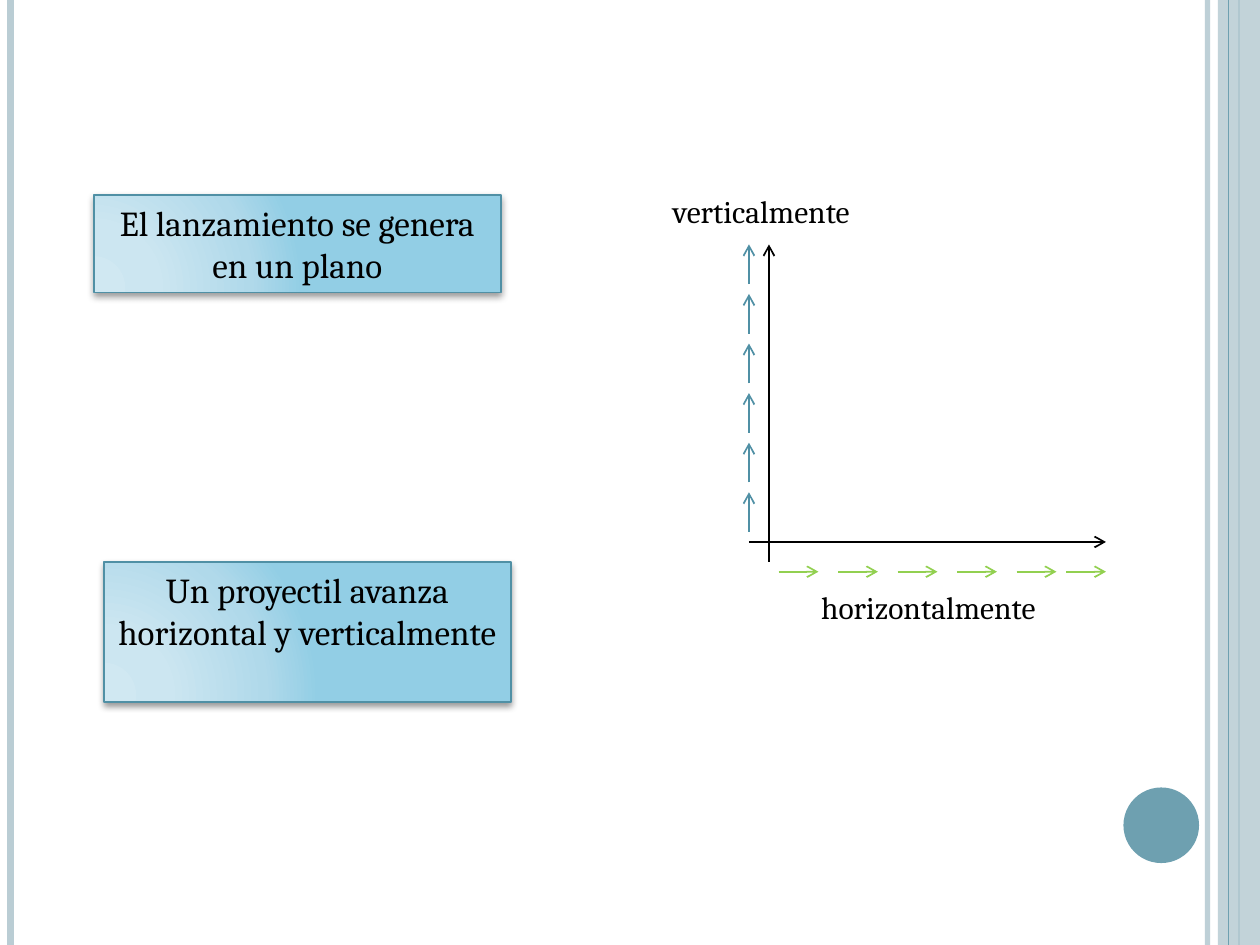
from lxml import etree
from pptx import Presentation
from pptx.dml.color import RGBColor
from pptx.enum.shapes import MSO_CONNECTOR, MSO_SHAPE
from pptx.enum.text import MSO_ANCHOR, PP_ALIGN as Align
from pptx.oxml import parse_xml
from pptx.oxml.ns import nsdecls, qn
from pptx.util import Pt

BLACK = RGBColor(0x00, 0x00, 0x00)
PALE = RGBColor(0xBA, 0xCD, 0xD4)
TEAL = RGBColor(0x6E, 0xA0, 0xB0)
BLUE = RGBColor(0x50, 0x90, 0xA5)
GREEN = RGBColor(0x92, 0xD0, 0x50)
BOX_STOPS = [
    (0, RGBColor(0xD0, 0xE8, 0xF2)),
    (30, RGBColor(0xCC, 0xE6, 0xF1)),
    (75, RGBColor(0xB0, 0xD9, 0xEA)),
    (100, RGBColor(0x92, 0xCE, 0xE5)),
]
BOX_SHADOW = (
    f'<a:effectLst {nsdecls("a")}>'
    '<a:outerShdw blurRad="50800" dist="25400" dir="5400000" rotWithShape="0">'
    '<a:srgbClr val="000000"><a:alpha val="40000"/></a:srgbClr>'
    '</a:outerShdw></a:effectLst>'
)


def radial_fill(stops):
    marks = "".join(
        f'<a:gs pos="{percent * 1000}"><a:srgbClr val="{color}"/></a:gs>'
        for percent, color in stops
    )
    return parse_xml(
        f'<a:gradFill {nsdecls("a")} rotWithShape="1"><a:gsLst>{marks}</a:gsLst>'
        '<a:path path="circle">'
        '<a:fillToRect l="5000" t="100000" r="120000" b="10000"/>'
        '</a:path></a:gradFill>'
    )


def set_opacity(element, percent):
    color = next(element.iter(qn("a:srgbClr")))
    etree.SubElement(color, qn("a:alpha")).set("val", str(percent * 1000))


class Painter:
    font = "Cambria"

    def __init__(self, page):
        self.page = page

    def line(self, start, end, color, width=1, opacity=100):
        line = self.page.shapes.add_connector(
            MSO_CONNECTOR.STRAIGHT, *map(Pt, (*start, *end)))
        line.line.color.rgb = color
        line.line.width = Pt(width)
        properties = line._element.spPr
        if opacity < 100:
            set_opacity(properties, opacity)
        etree.SubElement(properties, qn("a:effectLst"))
        return line

    def arrow(self, start, end, color):
        arrow = self.line(start, end, color)
        outline = arrow._element.spPr.find(qn("a:ln"))
        etree.SubElement(outline, qn("a:tailEnd")).set("type", "arrow")

    def shape(self, kind, frame, color, opacity=100):
        shape = self.page.shapes.add_shape(kind, *map(Pt, frame))
        shape.shadow.inherit = False
        shape.fill.solid()
        shape.fill.fore_color.rgb = color
        shape.line.fill.background()
        if opacity < 100:
            set_opacity(shape._element.spPr, opacity)

    def set_text(self, holder, text, size, align):
        holder.text_frame.word_wrap = True
        holder.text_frame.vertical_anchor = MSO_ANCHOR.TOP
        para = holder.text_frame.paragraphs[0]
        para.text = text
        para.alignment = align
        para.font.name = self.font
        para.font.size = Pt(size)
        para.font.color.rgb = BLACK

    def box(self, frame, text):
        """Add a shaded, shadowed box with centred text."""
        box = self.page.shapes.add_shape(MSO_SHAPE.RECTANGLE, *map(Pt, frame))
        box.line.color.rgb = BLUE
        box.line.width = Pt(1)
        properties = box._element.spPr
        properties.find(qn("a:prstGeom")).addnext(radial_fill(BOX_STOPS))
        properties.append(parse_xml(BOX_SHADOW))
        self.set_text(box, text, 20, Align.CENTER)

    def label(self, frame, text):
        label = self.page.shapes.add_textbox(*map(Pt, frame))
        self.set_text(label, text, 18, Align.LEFT)


def main():
    deck = Presentation()
    deck.slide_width, deck.slide_height = Pt(720), Pt(540)
    painter = Painter(deck.slides.add_slide(deck.slide_layouts[6]))

    def stripe(x, color, width, opacity=100):
        painter.line((x, 0), (x, 540), color, width, opacity)

    stripe(690, PALE, 3, 93)
    stripe(6, PALE, 4.5)
    stripe(708, TEAL, 1.5)
    painter.shape(MSO_SHAPE.RECTANGLE, (696, 0, 24, 540), PALE, 87)
    stripe(702, TEAL, 0.75)
    painter.shape(MSO_SHAPE.OVAL, (642, 450, 43.2, 43.2), TEAL)

    painter.box((53.7, 111.4, 232.5, 55.7), "El lanzamiento se genera en un plano")
    painter.box((59.4, 321.1, 232.5, 80), "Un proyectil avanza horizontal y verticalmente")

    painter.arrow((439.4, 321.1), (439.4, 139.7), BLACK)
    painter.arrow((428, 309.7), (632, 309.7), BLACK)
    step_length = 22.7
    for x in [*(445 + 34 * i for i in range(5)), 609.3]:
        painter.arrow((x, 326.7), (x + step_length, 326.7), GREEN)
    for i in range(6):
        y = 304 - 28.33 * i
        painter.arrow((428, y), (428, y - step_length), BLUE)

    painter.label((377.3, 106, 147.6, 29), "verticalmente")
    painter.label((462.2, 332.6, 175.7, 29), "horizontalmente")

    deck.save("out.pptx")


if __name__ == "__main__":
    main()
